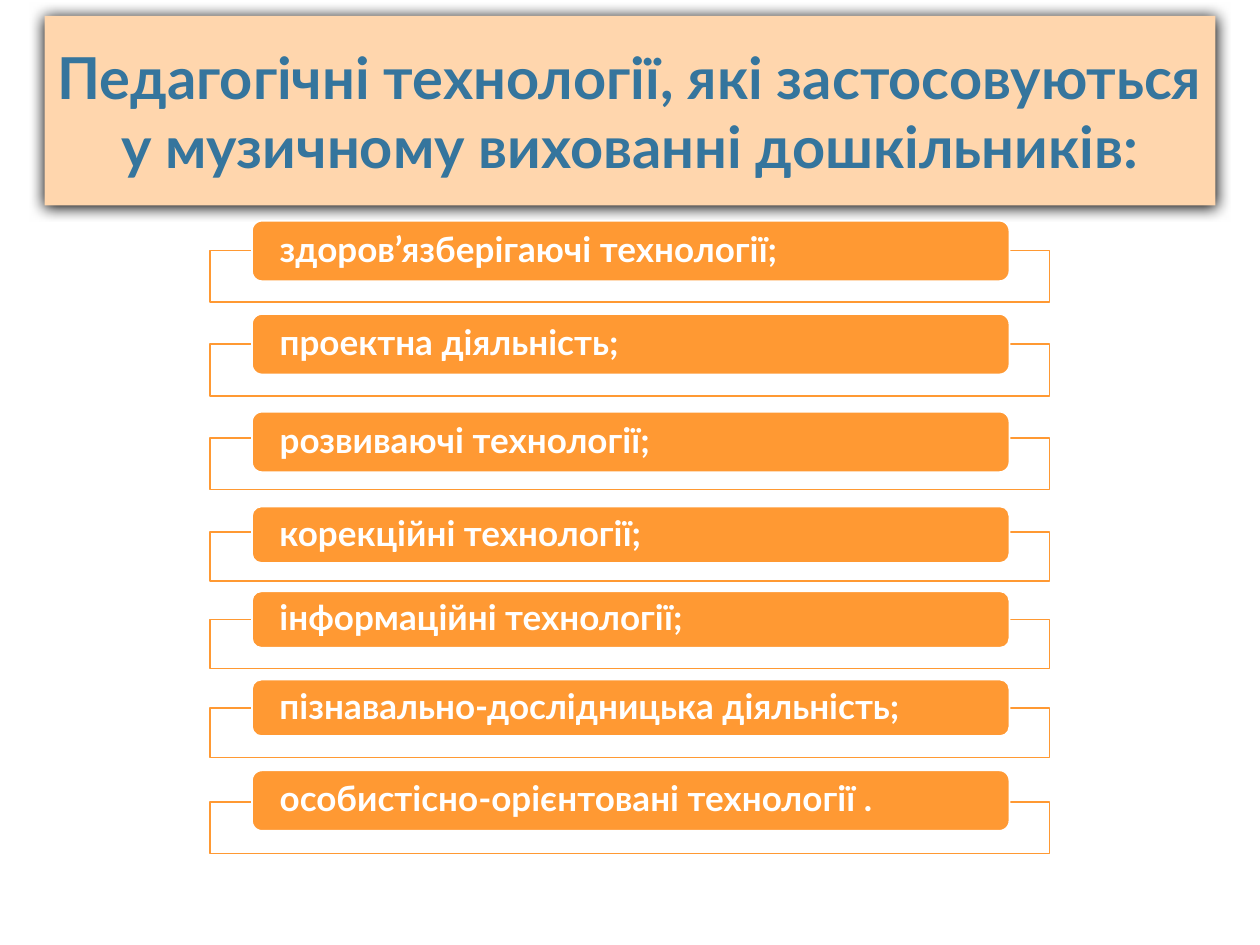
import pptx
import pptx.dml.color
import pptx.enum.shapes
import pptx.enum.text
import pptx.oxml
import pptx.oxml.ns
import pptx.util
from pptx.util import Cm

FONT = "Lato"
ORANGE = "FF9933"
WHITE = "FFFFFF"
SHAPES = pptx.enum.shapes.MSO_SHAPE
ALIGN = pptx.enum.text.PP_ALIGN

TITLE = "Педагогічні технології, які застосовуються у музичному вихованні дошкільників:"
TECHNOLOGIES = [
    ("здоров’язберігаючі технології;", 5.05, 1.04, 4.45, 1.22),
    ("проектна діяльність;", 6.94, 1.04, 6.33, 1.22),
    ("розвиваючі технології;", 8.83, 1.04, 8.3, 1.22),
    ("корекційні технології;", 10.72, 0.99, 10.21, 1.14),
    ("інформаційні технології;", 12.49, 0.99, 11.92, 1.14),
    ("пізнавально-дослідницька діяльність;", 14.28, 0.99, 13.7, 1.14),
    ("особистісно-орієнтовані технології .", 16.17, 1.04, 15.53, 1.22),
]


def color(value):
    return pptx.dml.color.RGBColor.from_string(value)


def paint(shape, fill):
    shape.fill.solid()
    shape.fill.fore_color.rgb = color(fill)


def write(shape, text, size, ink, align, inset):
    frame = shape.text_frame
    frame.word_wrap = True
    frame.auto_size = pptx.enum.text.MSO_AUTO_SIZE.NONE
    frame.vertical_anchor = pptx.enum.text.MSO_ANCHOR.MIDDLE
    frame.margin_left = frame.margin_right = Cm(inset)
    frame.margin_top = frame.margin_bottom = 0
    para = frame.paragraphs[0]
    para.text = text
    para.alignment = align
    para.font.name = FONT
    para.font.size = pptx.util.Pt(size)
    para.font.bold = True
    para.font.color.rgb = color(ink)
    return para


def add_shadow(shape):
    shape._element.spPr.append(pptx.oxml.parse_xml(
        f'<a:effectLst {pptx.oxml.ns.nsdecls("a")}>'
        '<a:outerShdw blurRad="107950" dist="12700" dir="5400000" algn="ctr" rotWithShape="0">'
        '<a:srgbClr val="000000"/></a:outerShdw></a:effectLst>'
    ))


def format_title(page):
    title = page.shapes.title
    title.left, title.top = Cm(0.9), Cm(0.32)
    title.width, title.height = Cm(23.6), Cm(3.82)
    paint(title, "FFD6AD")
    add_shadow(title)
    write(title, TITLE, 33, "35759D", ALIGN.CENTER, 0.25)


def add_panel(page, kind, left, top, width, height, fill, outline):
    panel = page.shapes.add_shape(kind, Cm(left), Cm(top), Cm(width), Cm(height))
    panel.shadow.inherit = False
    paint(panel, fill)
    panel.line.color.rgb = color(outline)
    panel.line.width = pptx.util.Pt(1)
    return panel


def add_technology(page, text, frame_top, frame_height, bar_top, bar_height):
    frame = add_panel(page, SHAPES.RECTANGLE, 4.23, frame_top, 16.93, frame_height, WHITE, ORANGE)
    fill_color = frame._element.spPr.find(
        f'{pptx.oxml.ns.qn("a:solidFill")}/{pptx.oxml.ns.qn("a:srgbClr")}')
    fill_color.append(pptx.oxml.parse_xml(
        f'<a:alpha {pptx.oxml.ns.nsdecls("a")} val="90000"/>'))
    bar = add_panel(page, SHAPES.ROUNDED_RECTANGLE, 5.08, bar_top, 15.27, bar_height, ORANGE, WHITE)
    para = write(bar, text, 20, WHITE, ALIGN.LEFT, 0.5)
    para.line_spacing = 0.9


def main():
    deck = pptx.Presentation()
    deck.slide_width, deck.slide_height = Cm(25.4), Cm(19.05)
    page = deck.slides.add_slide(deck.slide_layouts[5])
    format_title(page)
    for technology in TECHNOLOGIES:
        add_technology(page, *technology)
    deck.save("out.pptx")


if __name__ == "__main__":
    main()
